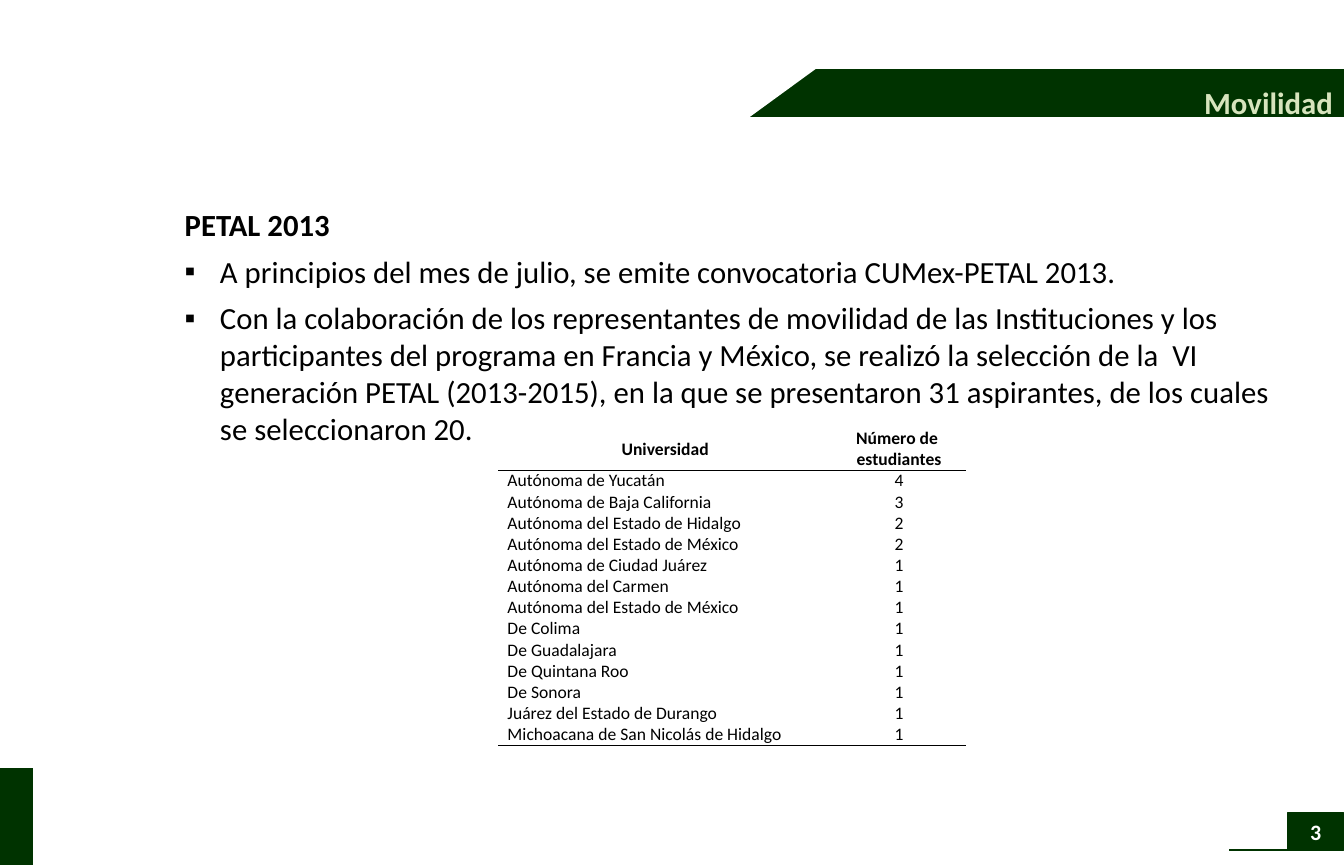
import pptx
import pptx.dml.color
import pptx.enum.shapes
import pptx.enum.text
import pptx.oxml
import pptx.oxml.ns
import pptx.util

Pt = pptx.util.Pt
RGBColor = pptx.dml.color.RGBColor
Shape = pptx.enum.shapes.MSO_SHAPE
Align = pptx.enum.text.PP_ALIGN
Anchor = pptx.enum.text.MSO_ANCHOR

DARK_GREEN = RGBColor(0x00, 0x33, 0x00)
PALE_GREEN = RGBColor(0xD7, 0xE4, 0xBD)
BLACK = RGBColor(0, 0, 0)
WHITE = RGBColor(255, 255, 255)
FONT = "Calibri"
NO_STYLE = "{2D5ABB26-0587-4C30-8999-92F81FD0307C}"

TITLE = "Movilidad"
PAGE_NUMBER = "3"
HEADING = "PETAL 2013"
BULLETS = [
    "A principios del mes de julio, se emite convocatoria CUMex-PETAL 2013.",
    "Con la colaboración de los representantes de movilidad de las Instituciones y los "
    "participantes del programa en Francia y México, se realizó la selección de la  VI "
    "generación PETAL (2013-2015), en la que se presentaron 31 aspirantes, de los cuales "
    "se seleccionaron 20.",
]
TABLE_HEADER = (["Universidad"], ["Número de ", "estudiantes"])
STUDENTS = [
    ("Autónoma de Yucatán", 4),
    ("Autónoma de Baja California", 3),
    ("Autónoma del Estado de Hidalgo", 2),
    ("Autónoma del Estado de México", 2),
    ("Autónoma de Ciudad Juárez", 1),
    ("Autónoma del Carmen", 1),
    ("Autónoma del Estado de México", 1),
    ("De Colima", 1),
    ("De Guadalajara", 1),
    ("De Quintana Roo", 1),
    ("De Sonora", 1),
    ("Juárez del Estado de Durango", 1),
    ("Michoacana de San Nicolás de Hidalgo", 1),
]

WIDTH, HEIGHT = 612.5, 394.1
BAND_LEFT, BAND_TOP, BAND_HEIGHT = 338.4, 31.5, 21.8
MARK_WIDTH, MARK_TOP = 15, 349.9
COLUMN_WIDTHS = (152.4, 60.8)
HEADER_HEIGHT, ROW_HEIGHT = 19.2, 9.6


def xml(tag, content="", attributes=""):
    return pptx.oxml.parse_xml(
        f'<a:{tag} {pptx.oxml.ns.nsdecls("a")} {attributes}>{content}</a:{tag}>')


def add_block(page, kind, left, top, width, height, color):
    block = page.shapes.add_shape(kind, Pt(left), Pt(top), Pt(width), Pt(height))
    block.shadow.inherit = False
    block.fill.solid()
    block.fill.fore_color.rgb = color
    block.line.fill.background()
    return block


def set_frame(frame, anchor=Anchor.TOP):
    frame.word_wrap = True
    frame.auto_size = pptx.enum.text.MSO_AUTO_SIZE.NONE
    frame.vertical_anchor = anchor
    frame.margin_left = frame.margin_right = Pt(5)
    frame.margin_top = frame.margin_bottom = Pt(2.9)


def write(para, words, size, color=BLACK, bold=False, align=Align.LEFT):
    para.alignment = align
    span = para.add_run()
    span.text = words
    span.font.name = FONT
    span.font.size = Pt(size)
    span.font.bold = bold
    span.font.color.rgb = color


def fill_cell(cell, lines, bold, align, anchor, ruled):
    cell.margin_left = cell.margin_right = Pt(4.3)
    cell.margin_top = cell.margin_bottom = 0
    cell.vertical_anchor = anchor
    cell.fill.background()
    for index, line in enumerate(lines):
        frame = cell.text_frame
        para = frame.add_paragraph() if index else frame.paragraphs[0]
        para.line_spacing = Pt(ROW_HEIGHT)
        write(para, line, 8, bold=bold, align=align)
    if ruled:
        rule = xml("lnB", f'<a:solidFill><a:srgbClr val="{BLACK}"/></a:solidFill>',
                   f'w="{Pt(1)}"')
        cell._tc.get_or_add_tcPr().insert(0, rule)


def add_title(page):
    title = page.shapes.title
    title.left, title.top, title.width, title.height = Pt(402.5), Pt(29.9), Pt(210), Pt(25.9)
    set_frame(title.text_frame)
    para = title.text_frame.paragraphs[0]
    para.line_spacing = Pt(22.2)
    write(para, TITLE, 14, PALE_GREEN, True, Align.RIGHT)
    page.shapes._spTree.append(title._element)  # in front of the band


def add_body(page):
    box = page.shapes.add_textbox(Pt(79.2), Pt(91.1), Pt(508.3), Pt(115.2))
    frame = box.text_frame
    set_frame(frame)
    heading = frame.paragraphs[0]
    heading.space_after = Pt(4.3)
    write(heading, HEADING, 14, bold=True)
    for words in BULLETS:
        para = frame.add_paragraph()
        properties = para._p.get_or_add_pPr()
        properties.set("marL", str(Pt(16.1)))
        properties.set("indent", str(-Pt(16.1)))
        properties.append(xml("buFont", attributes='typeface="Arial"'))
        properties.append(xml("buChar", attributes='char="▪"'))
        para.space_after = Pt(4.3)
        write(para, words, 14)


def add_students_table(page):
    row_count = len(STUDENTS) + 1
    frame = page.shapes.add_table(
        row_count, 2, Pt(227), Pt(195.1), Pt(sum(COLUMN_WIDTHS)),
        Pt(HEADER_HEIGHT + ROW_HEIGHT * len(STUDENTS)))
    table = frame.table
    table.first_row = table.horz_banding = False
    table._tbl.tblPr.find(pptx.oxml.ns.qn("a:tableStyleId")).text = NO_STYLE
    for column, width in zip(table.columns, COLUMN_WIDTHS):
        column.width = Pt(width)
    for index, row in enumerate(table.rows):
        row.height = Pt(ROW_HEIGHT if index else HEADER_HEIGHT)
    for column, lines in enumerate(TABLE_HEADER):
        fill_cell(table.cell(0, column), lines, True, Align.CENTER, Anchor.MIDDLE, True)
    for row, record in enumerate(STUDENTS, start=1):
        for column, align in enumerate((Align.JUSTIFY, Align.CENTER)):
            fill_cell(table.cell(row, column), [str(record[column])], False, align,
                      Anchor.TOP, row == len(STUDENTS))


def add_page_number(page):
    badge = add_block(page, Shape.RECTANGLE, 587, 370.2, 25.2, 17.3, DARK_GREEN)
    badge.line.color.rgb = DARK_GREEN
    badge.line.width = Pt(0.5)
    set_frame(badge.text_frame, Anchor.MIDDLE)
    write(badge.text_frame.paragraphs[0], PAGE_NUMBER, 10, WHITE, True, Align.CENTER)
    rule = page.shapes.add_connector(
        pptx.enum.shapes.MSO_CONNECTOR.STRAIGHT, Pt(560.2), Pt(387.3), Pt(612.2), Pt(387.3))
    rule.line.color.rgb = DARK_GREEN
    rule.line.width = Pt(0.75)
    rule._element.spPr.append(xml("effectLst"))


def main():
    deck = pptx.Presentation()
    deck.slide_width, deck.slide_height = Pt(WIDTH), Pt(HEIGHT)
    page = deck.slides.add_slide(deck.slide_layouts[5])
    add_block(page, Shape.RECTANGLE, BAND_LEFT, BAND_TOP, WIDTH - BAND_LEFT, BAND_HEIGHT,
              DARK_GREEN)
    add_block(page, Shape.RECTANGLE, 0, MARK_TOP, MARK_WIDTH, HEIGHT - MARK_TOP, DARK_GREEN)
    corner = add_block(page, Shape.RIGHT_TRIANGLE, 342, 26.6, 25.2, 34.6, WHITE)
    corner.rotation = 90
    add_body(page)
    add_students_table(page)
    add_title(page)
    add_page_number(page)
    deck.save("out.pptx")


if __name__ == "__main__":
    main()
